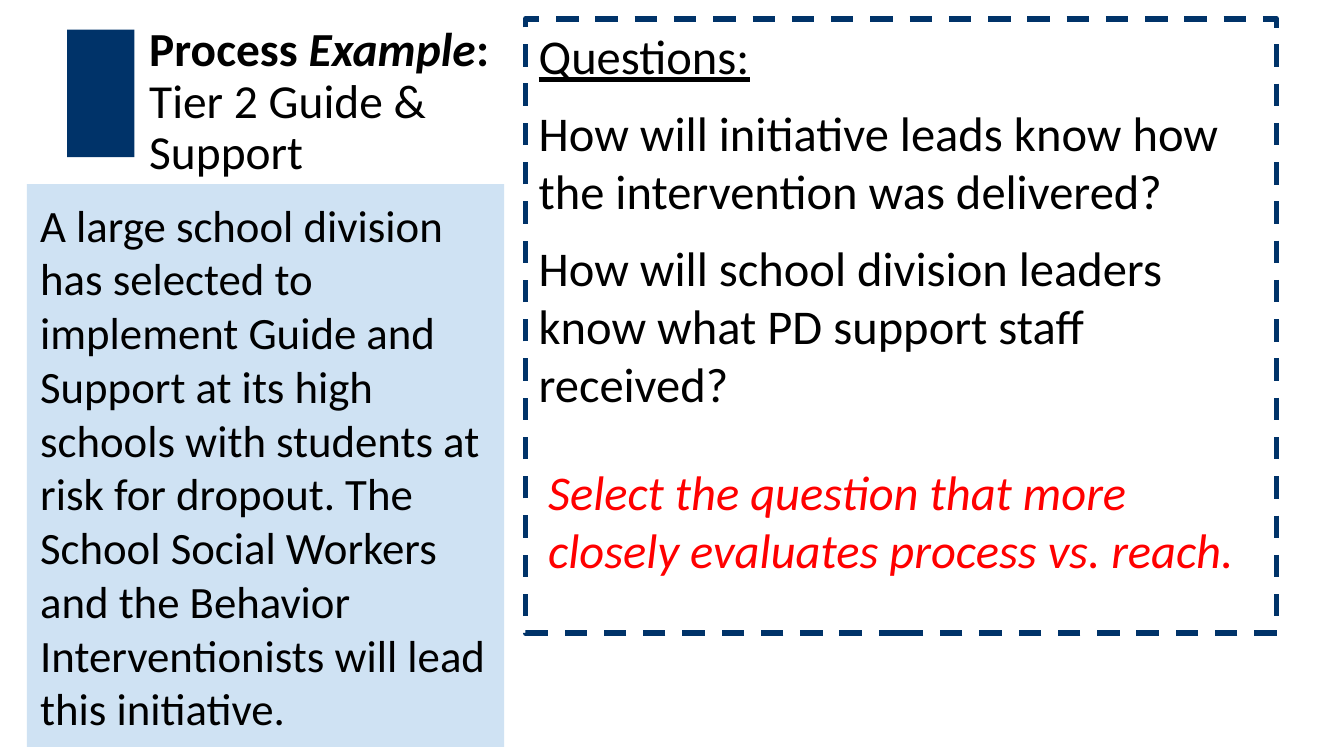
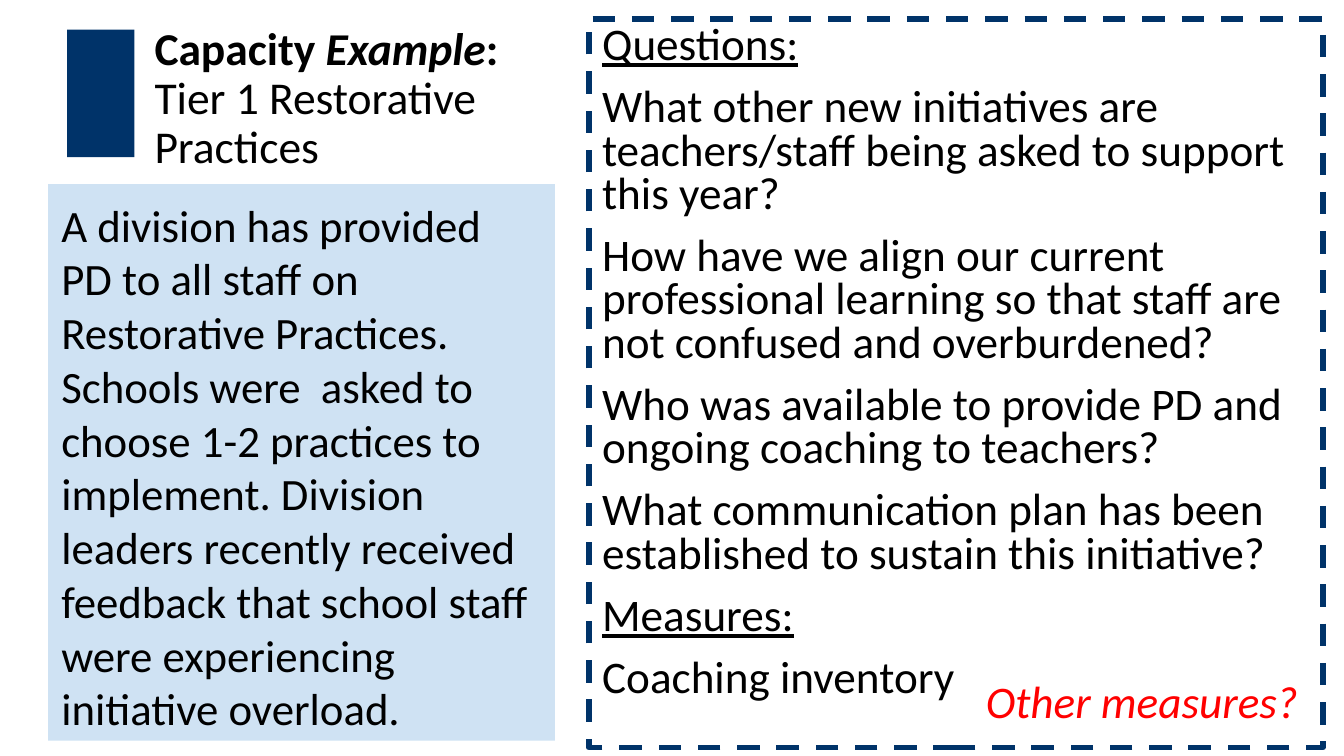
from pptx import Presentation
from pptx.dml.color import RGBColor
from pptx.enum.dml import MSO_LINE
from pptx.enum.shapes import MSO_SHAPE
from pptx.enum.text import MSO_ANCHOR, MSO_AUTO_SIZE, PP_ALIGN
from pptx.util import Cm, Pt

RECTANGLE = MSO_SHAPE.RECTANGLE
DASH = MSO_LINE.DASH
TOP = MSO_ANCHOR.TOP
NO_FIT = MSO_AUTO_SIZE.NONE
LEFT, RIGHT = PP_ALIGN.LEFT, PP_ALIGN.RIGHT

FONT = "Calibri"
NAVY, PALE_BLUE, RED, BLACK, WHITE = "003369", "CFE2F3", "FF0000", "000000", "FFFFFF"
TITLE_ONLY = 5
TOP_EDGE = 0.36
SCENARIO_TOP = 3.48
BAR_BOX = (1.27, 0.56, 1.27, 2.41)

EXAMPLES = [
    {
        "title_box": (2.57, TOP_EDGE, 7.09, 2.72),
        "title_size": 25.4,
        "topic": "Process ",
        "subject": "Tier 2 Guide & Support",
        "questions_box": (9.93, TOP_EDGE, 14.2, 11.61),
        "size": 26,
        "spacing": 1.0,
        "questions": [
            "Questions:",
            "How will initiative leads know how the intervention was delivered?",
            "How will school division leaders know what PD support staff received?",
        ],
        "prompt_box": (10.11, 8.48, 13.79, 2.36),
        "prompt": "Select the question that more closely evaluates process vs. reach.",
        "prompt_align": LEFT,
        "scenario_box": (0.51, SCENARIO_TOP, 9.02, 10.64),
        "scenario": "A large school division has selected to implement Guide and "
                    "Support at its high schools with students at risk for dropout. "
                    "The School Social Workers and the Behavior Interventionists "
                    "will lead this initiative.",
    },
    {
        "title_box": (2.67, TOP_EDGE, 7.19, 2.72),
        "title_size": 24.4,
        "topic": "Capacity ",
        "subject": "Tier 1 Restorative Practices",
        "questions_box": (11.13, TOP_EDGE, 13.87, 13.77),
        "size": 24.2,
        "spacing": 0.8,
        "questions": [
            "Questions:",
            "What other new initiatives are teachers/staff being asked to support "
            "this year?",
            "How have we align our current professional learning so that staff are "
            "not confused and overburdened?",
            "Who was available to provide PD and ongoing coaching to teachers?",
            "What communication plan has been established to sustain this initiative?",
            "Measures:",
            "Coaching inventory",
        ],
        "prompt_box": (18.21, 12.67, 6.58, 1.24),
        "prompt": "Other measures?",
        "prompt_align": RIGHT,
        "scenario_box": (0.91, SCENARIO_TOP, 9.58, 10.52),
        "scenario": "A division has provided PD to all staff on Restorative Practices. "
                    "Schools were  asked to choose 1-2 practices to implement. "
                    "Division leaders recently received feedback that school staff "
                    "were experiencing initiative overload.",
    },
]


def paint(fill, color):
    fill.solid()
    fill.fore_color.rgb = RGBColor.from_string(color)


def add_panel(page, box, color):
    panel = page.shapes.add_shape(RECTANGLE, *map(Cm, box))
    panel.shadow.inherit = False
    paint(panel.fill, color)
    panel.line.fill.background()
    return panel


def prepare_frame(shape, margin):
    """Set wrapping, top anchor and insets; margin is the top and bottom inset."""
    frame = shape.text_frame
    frame.word_wrap = True
    frame.auto_size = NO_FIT
    frame.vertical_anchor = TOP
    frame.margin_left = frame.margin_right = Cm(0.25)
    frame.margin_top = frame.margin_bottom = Cm(margin)
    return frame


def add_paragraph(frame, spans, size, color=BLACK, align=LEFT, spacing=1.0, before=0):
    """Write one paragraph from (text, set of style names) pairs."""
    first = frame.paragraphs[0]
    para = frame.add_paragraph() if first.runs else first
    para.alignment = align
    para.line_spacing = spacing
    para.space_before = Pt(before)
    for text, styles in spans:
        span = para.add_run()
        span.text = text
        font = span.font
        font.name, font.size = FONT, Pt(size)
        font.color.rgb = RGBColor.from_string(color)
        font.bold = "bold" in styles
        font.italic = "italic" in styles
        font.underline = "underline" in styles


def add_title(page, example):
    add_panel(page, BAR_BOX, NAVY)
    title = page.shapes.title
    title.left, title.top, title.width, title.height = map(Cm, example["title_box"])
    paint(title.fill, WHITE)
    frame = prepare_frame(title, 0.13)
    heading = [(example["topic"], {"bold"}), ("Example", {"bold", "italic"}),
               (":", {"bold"})]
    for spans in (heading, [(example["subject"], set())]):
        add_paragraph(frame, spans, example["title_size"], spacing=0.9)


def add_questions(page, example):
    panel = add_panel(page, example["questions_box"], WHITE)
    paint(panel.line.fill, NAVY)
    panel.line.width = Pt(3)
    panel.line.dash_style = DASH
    frame = prepare_frame(panel, 0.13)
    for text in example["questions"]:
        styles = {"underline"} if text.endswith(":") else set()
        add_paragraph(frame, [(text, styles)], example["size"],
                      spacing=example["spacing"], before=10)


def add_prompt(page, example):
    prompt = page.shapes.add_textbox(*map(Cm, example["prompt_box"]))
    add_paragraph(prepare_frame(prompt, 0.25), [(example["prompt"], {"italic"})],
                  example["size"], RED, example["prompt_align"],
                  example["spacing"], before=10)


def add_scenario(page, example):
    panel = add_panel(page, example["scenario_box"], PALE_BLUE)
    add_paragraph(prepare_frame(panel, 0.25), [(example["scenario"], set())], 24)


def add_example_page(deck, example):
    page = deck.slides.add_slide(deck.slide_layouts[TITLE_ONLY])
    paint(page.background.fill, WHITE)
    for add_region in (add_title, add_questions, add_prompt, add_scenario):
        add_region(page, example)


def main():
    deck = Presentation()
    deck.slide_width, deck.slide_height = Cm(25.4), Cm(14.29)
    for example in EXAMPLES:
        add_example_page(deck, example)
    deck.save("out.pptx")


if __name__ == "__main__":
    main()
